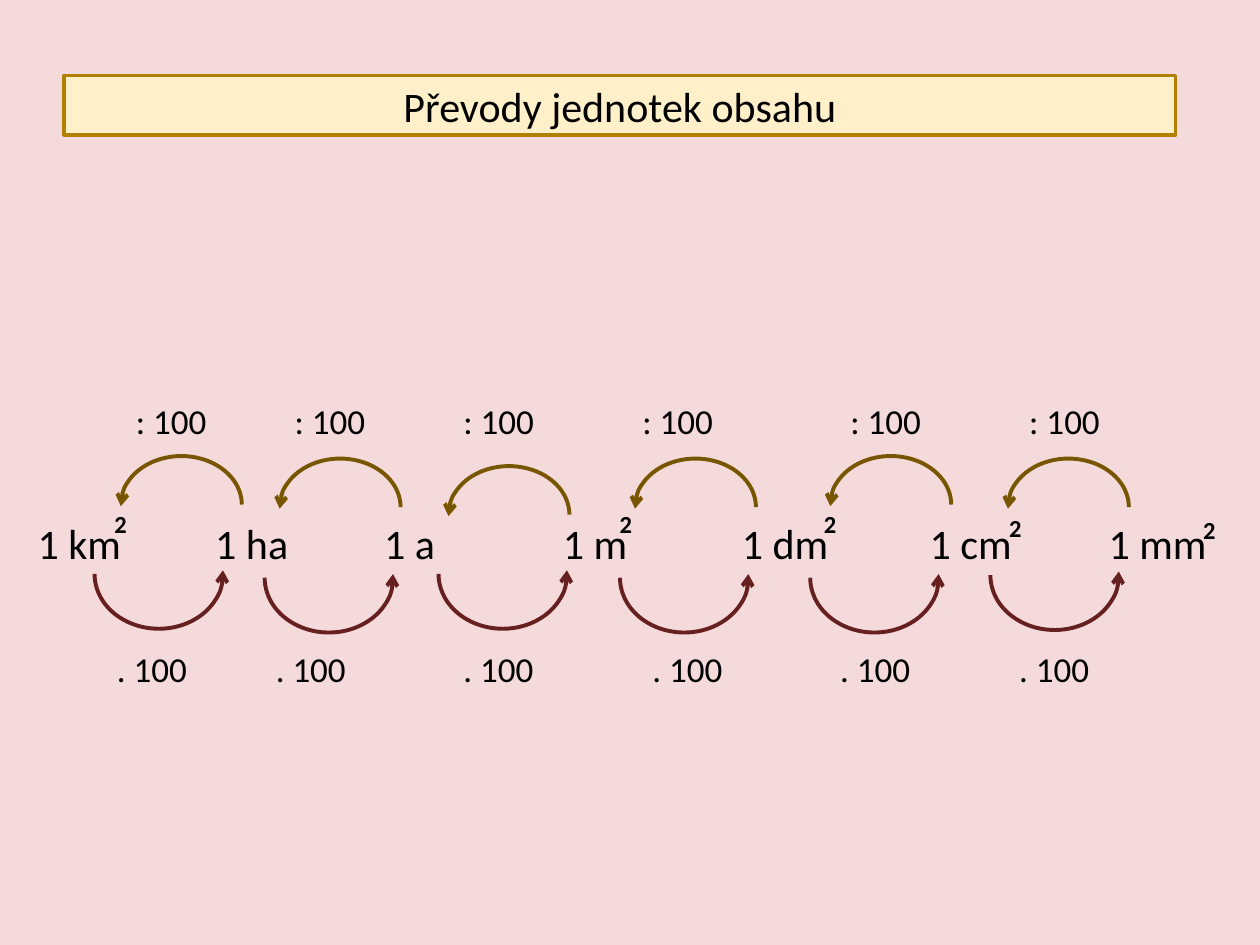
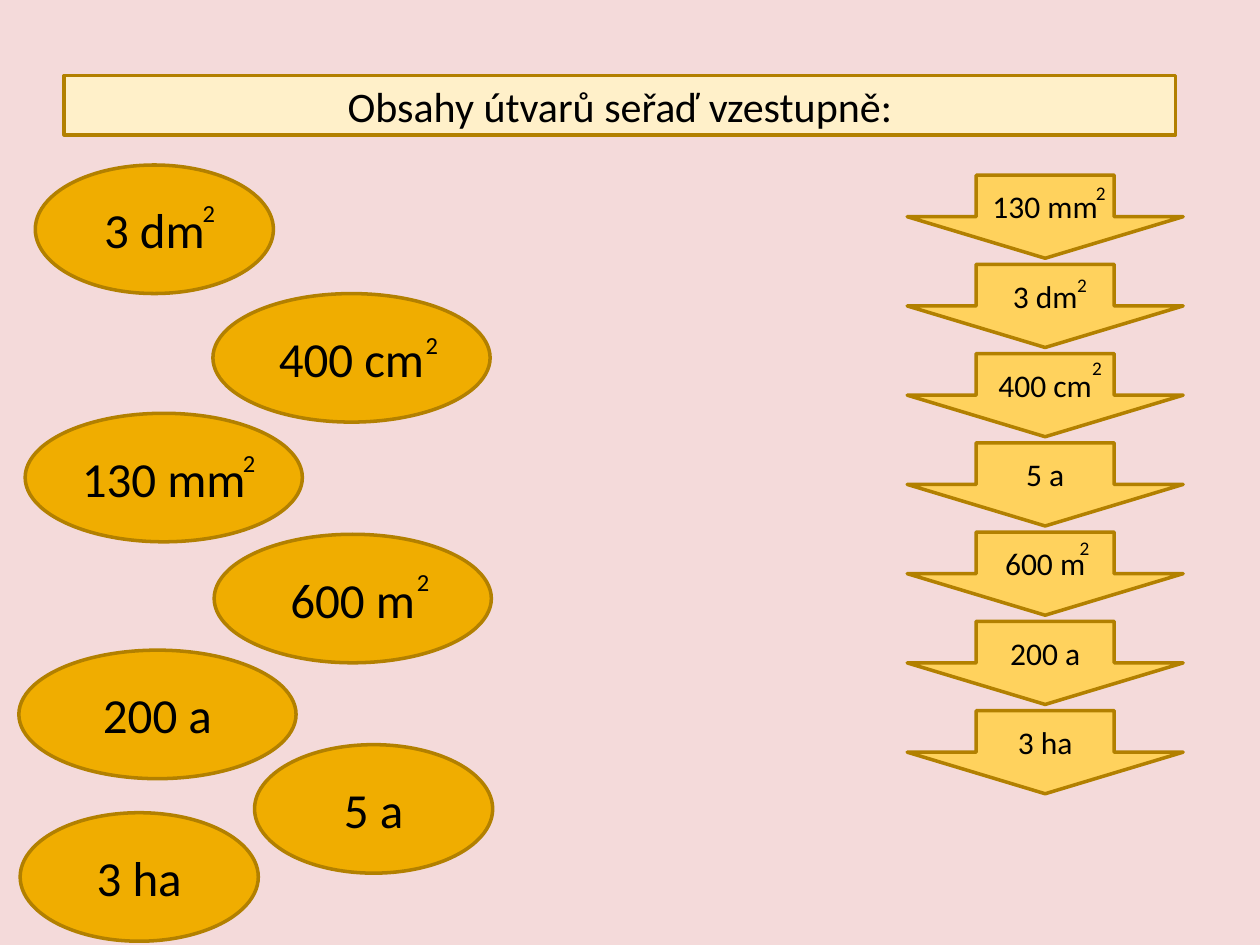
import pptx
import pptx.dml.color
import pptx.enum.shapes
import pptx.enum.text
import pptx.oxml
import pptx.util
from pptx.oxml.ns import qn

SHAPES = pptx.enum.shapes.MSO_SHAPE
ALIGN = pptx.enum.text.PP_ALIGN
AUTO_SIZE = pptx.enum.text.MSO_AUTO_SIZE
MIDDLE = pptx.enum.text.MSO_ANCHOR.MIDDLE

SLIDE_WIDTH, SLIDE_HEIGHT = 10, 7.5
FONT = "Calibri"
BLACK = "000000"
PINK = "F4DADA"
CREAM = "FFF0C9"
GOLD_LINE = "B28000"
ORANGE = "F0AD00"
YELLOW = "FFD25D"
BROWN = "785600"
MAROON = "672020"

CONVERSION_TITLE = "Převody jednotek obsahu"
ORDERING_TITLE = "Obsahy útvarů seřaď vzestupně:"

# Unit, left edge, then left and top of its exponent
UNITS = [
    ("1 km", 0.2, (0.81, 3.99)),
    ("1 ha", 1.61, None),
    ("1 a", 2.95, None),
    ("1 m", 4.37, (4.82, 3.99)),
    ("1 dm", 5.79, (6.44, 3.99)),
    ("1 cm", 7.28, (7.91, 4.02)),
    ("1 mm", 8.7, (9.45, 4.04)),
]

# Each step has a label left edge, then left and top of its arc
CONVERSIONS = [
    dict(label=": 100", label_top=3.12, color=BROWN, arc_size=(0.96, 0.77),
         start=107.11, rotation=0,
         steps=[(0.98, 0.96, 3.62), (2.24, 2.22, 3.64), (3.58, 3.56, 3.7),
                (5, 5.04, 3.64), (6.65, 6.59, 3.62), (8.07, 8, 3.64)]),
    dict(label=". 100", label_top=5.09, color=MAROON, arc_size=(1.02, 0.87),
         start=106.03, rotation=180,
         steps=[(0.83, 0.75, 4.12), (2.09, 2.1, 4.15), (3.58, 3.48, 4.12),
                (5.08, 4.92, 4.15), (6.57, 6.43, 4.15), (7.99, 7.86, 4.13)]),
]

# Area, left, top and width of its ellipse, left and top of its exponent
SHUFFLED_AREAS = [
    ("3 dm", 0.28, 1.31, 1.89, (1.51, 1.52)),
    ("400 cm", 1.69, 2.33, 2.2, (3.28, 2.57)),
    ("130 mm", 0.2, 3.28, 2.2, (1.83, 3.51)),
    ("600 m", 1.7, 4.24, 2.2, (3.21, 4.45)),
    ("200 a", 0.15, 5.16, 2.2, None),
    ("5 a", 2.02, 5.91, 1.89, None),
    ("3 ha", 0.16, 6.45, 1.89, None),
]

SORTED_AREAS = [
    ("130 mm", (8.6, 1.39)),
    ("3 dm", (8.45, 2.12)),
    ("400 cm", (8.57, 2.78)),
    ("5 a", None),
    ("600 m", (8.47, 4.21)),
    ("200 a", None),
    ("3 ha", None),
]
ARROW_LEFT, ARROW_TOP, ARROW_WIDTH, ARROW_HEIGHT = 7.2, 1.39, 2.19, 0.66
ARROW_PITCH = 4.25 / (len(SORTED_AREAS) - 1)


def rgb(color):
    return pptx.dml.color.RGBColor.from_string(color)


def inches(*lengths):
    return [pptx.util.Inches(length) for length in lengths]


def write_text(shape, text, size, bold=False, align=ALIGN.LEFT, color=BLACK):
    paragraph = shape.text_frame.paragraphs[0]
    paragraph.alignment = align
    run = paragraph.add_run()
    run.text = text
    run.font.name = FONT
    run.font.size = pptx.util.Pt(size)
    run.font.bold = bold
    run.font.color.rgb = rgb(color)


def add_label(slide, text, left, top, width, height, **text_format):
    shape = slide.shapes.add_textbox(*inches(left, top, width, height))
    shape.text_frame.word_wrap = True
    shape.text_frame.auto_size = AUTO_SIZE.SHAPE_TO_FIT_TEXT
    write_text(shape, text, **text_format)


def add_exponent(slide, position, width, height, **text_format):
    """Add a raised 2, if the unit has a position for one."""
    if position:
        add_label(slide, "2", *position, width, height, **text_format)


def fill_box(shape, text, fill, size):
    """Give a title or a shape a gold outline and centred text."""
    shape.fill.solid()
    shape.fill.fore_color.rgb = rgb(fill)
    shape.line.color.rgb = rgb(GOLD_LINE)
    shape.line.width = pptx.util.Pt(2)
    shape.text_frame.vertical_anchor = MIDDLE
    shape.text_frame.auto_size = AUTO_SIZE.NONE
    write_text(shape, text, size, align=ALIGN.CENTER)


def add_area(slide, preset, text, left, top, width, height, fill, size):
    shape = slide.shapes.add_shape(preset, *inches(left, top, width, height))
    shape.shadow.inherit = False
    fill_box(shape, text, fill, size)


def add_arc(slide, left, top, size, start, rotation, color):
    """Add a half-ellipse with an arrowhead at its start."""
    arc = slide.shapes.add_shape(SHAPES.ARC, *inches(left, top, *size))
    arc.adjustments[0] = start
    arc.adjustments[1] = 0
    arc.rotation = rotation
    arc.shadow.inherit = False
    arc.fill.background()
    arc.line.color.rgb = rgb(color)
    arc.line.width = pptx.util.Pt(2.25)
    head = pptx.oxml.parse_xml(
        '<a:headEnd xmlns:a="http://schemas.openxmlformats.org/drawingml/2006/main"'
        ' type="arrow"/>')
    arc.element.spPr.find(qn("a:ln")).append(head)


def add_titled_slide(presentation, text):
    slide = presentation.slides.add_slide(
        presentation.slide_layouts.get_by_name("Title Only"))
    title = slide.shapes.title
    title.left, title.top, title.width, title.height = inches(0.51, 0.6, 8.82, 0.47)
    fill_box(title, text, CREAM, 24)
    return slide


def build_conversion_slide(presentation):
    slide = add_titled_slide(presentation, CONVERSION_TITLE)
    for unit, left, exponent in UNITS:
        add_label(slide, unit, left, 4.06, 1.1, 0.5, size=24)
        add_exponent(slide, exponent, 0.39, 0.34, size=14, bold=True)
    for row in CONVERSIONS:
        for label_left, arc_left, arc_top in row["steps"]:
            add_arc(slide, arc_left, arc_top, row["arc_size"], row["start"],
                    row["rotation"], row["color"])
            add_label(slide, row["label"], label_left, row["label_top"],
                      0.79, 0.44, size=20)


def build_ordering_slide(presentation):
    slide = add_titled_slide(presentation, ORDERING_TITLE)
    for area, left, top, width, exponent in SHUFFLED_AREAS:
        add_area(slide, SHAPES.OVAL, area, left, top, width, 1.02, ORANGE, 28)
        add_exponent(slide, exponent, 0.55, 0.34, size=14)
    for index, (area, exponent) in enumerate(SORTED_AREAS):
        add_area(slide, SHAPES.DOWN_ARROW, area, ARROW_LEFT,
                 ARROW_TOP + index * ARROW_PITCH, ARROW_WIDTH, ARROW_HEIGHT,
                 YELLOW, 18)
        add_exponent(slide, exponent, 0.63, 0.29, size=11)


def main():
    presentation = pptx.Presentation()
    presentation.slide_width, presentation.slide_height = inches(
        SLIDE_WIDTH, SLIDE_HEIGHT)
    background = presentation.slide_master.background.fill
    background.solid()
    background.fore_color.rgb = rgb(PINK)
    build_conversion_slide(presentation)
    build_ordering_slide(presentation)
    presentation.save("out.pptx")


if __name__ == "__main__":
    main()
